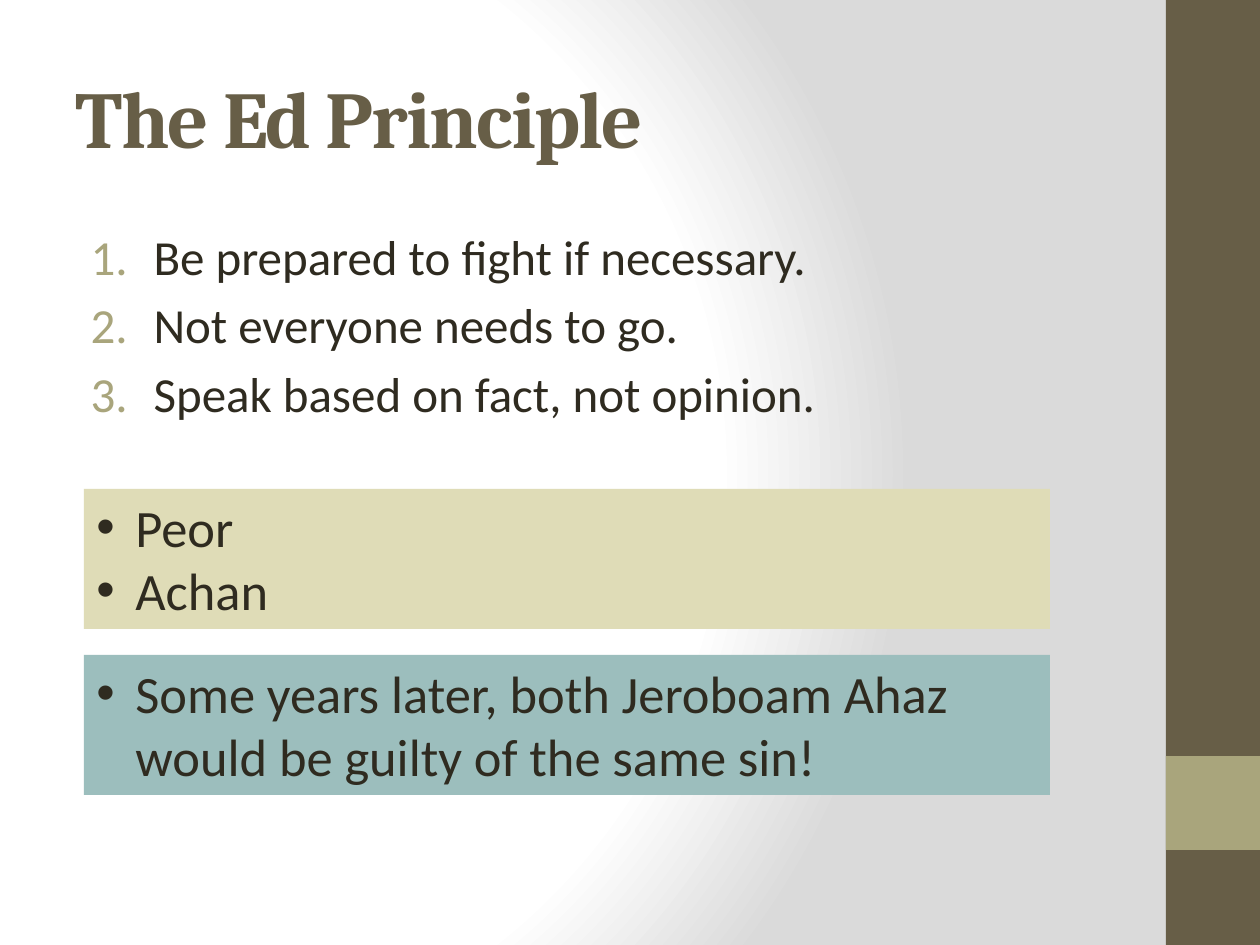
from lxml import etree
from pptx import Presentation
from pptx.dml.color import RGBColor
from pptx.enum.shapes import MSO_SHAPE as Shape
from pptx.enum.text import MSO_ANCHOR as Anchor, MSO_AUTO_SIZE as AutoSize, PP_ALIGN as Align
from pptx.oxml import parse_xml
from pptx.oxml.ns import nsdecls, qn
from pptx.util import Emu, Pt

PX = 914400 / 126
COLORS = {
    "brown": "675E47",
    "olive": "A9A57C",
    "ink": "2F2B20",
    "sand": "DFDCB7",
    "teal": "9CBEBD",
    "white": "FFFFFF",
    "gray": "DADADA",
}
STOPS = [(0, "white"), (75, "white"), (100, "gray")]
POINTS = ["Be prepared to fight if necessary.", "Not everyone needs to go.",
          "Speak based on fact, not opinion."]
CALLOUTS = [
    (489, "sand", ["Peor", "Achan"]),
    (655, "teal", ["Some years later, both Jeroboam Ahaz would be guilty of the same sin!"]),
]


def px(value):
    return Emu(round(value * PX))


def rgb(name):
    return RGBColor.from_string(COLORS[name])


def place(shape, left, top, width, height):
    shape.left, shape.top = px(left), px(top)
    shape.width, shape.height = px(width), px(height)


def set_font(paragraph, name, size, color, bold=False):
    font = paragraph.font
    font.name, font.size, font.bold = name, Pt(size), bold
    font.color.rgb = rgb(color)


def set_background(slide):
    slide.background.fill.solid()
    properties = slide.element.find(".//" + qn("p:bgPr"))
    stops = "".join(
        f'<a:gs pos="{position * 1000}"><a:srgbClr val="{COLORS[color]}"/></a:gs>'
        for position, color in STOPS)
    gradient = parse_xml(
        f'<a:gradFill {nsdecls("a")} rotWithShape="1"><a:gsLst>{stops}</a:gsLst>'
        '<a:path path="circle"><a:fillToRect l="20000" t="50000" r="100000" b="50000"/>'
        '</a:path></a:gradFill>')
    properties.replace(properties.find(qn("a:solidFill")), gradient)


def add_band(slide, top, height, color):
    band = slide.shapes.add_shape(Shape.RECTANGLE, px(1166), px(top), px(94), px(height))
    band.shadow.inherit = False
    band.fill.solid()
    band.fill.fore_color.rgb = rgb(color)
    band.line.fill.background()


def set_bullet(paragraph, left, hanging, tag, attributes, color):
    properties = paragraph._p.get_or_add_pPr()
    properties.set("marL", str(px(left)))
    properties.set("indent", str(-px(hanging)))
    bullet_color = etree.SubElement(properties, qn("a:buClr"))
    etree.SubElement(bullet_color, qn("a:srgbClr"), val=COLORS[color])
    if tag == "a:buChar":
        etree.SubElement(properties, qn("a:buFont"), typeface="Arial")
    etree.SubElement(properties, qn(tag), attributes)


def fill_list(frame, items, size, bullet):
    for index, item in enumerate(items):
        paragraph = frame.add_paragraph() if index else frame.paragraphs[0]
        paragraph.text = item
        set_bullet(paragraph, *bullet)
        set_font(paragraph, "Calibri", size, "ink")


def fill_title(title, text):
    place(title, 63, 38, 1050, 157)
    frame = title.text_frame
    frame.text = text
    frame.auto_size = AutoSize.NONE
    frame.vertical_anchor = Anchor.MIDDLE
    paragraph = frame.paragraphs[0]
    paragraph.alignment = Align.LEFT
    set_font(paragraph, "Cambria", 46, "brown", bold=True)
    paragraph.runs[0].font._element.set("spc", "-100")


def fill_body(body, items):
    place(body, 63, 220, 1050, 220)
    body.text_frame.auto_size = AutoSize.NONE
    numbering = (78, 63, "a:buAutoNum", {"type": "arabicPeriod"}, "olive")
    fill_list(body.text_frame, items, 28, numbering)


def add_callout(slide, top, color, items):
    callout = slide.shapes.add_textbox(px(84), px(top), px(966), px(140))
    callout.fill.solid()
    callout.fill.fore_color.rgb = rgb(color)
    frame = callout.text_frame
    frame.word_wrap = True
    frame.auto_size = AutoSize.SHAPE_TO_FIT_TEXT
    fill_list(frame, items, 30, (39, 39, "a:buChar", {"char": "•"}, "ink"))


def main():
    presentation = Presentation()
    presentation.slide_width, presentation.slide_height = px(1260), px(945)
    slide = presentation.slides.add_slide(presentation.slide_layouts[1])
    set_background(slide)
    add_band(slide, 0, 945, "brown")
    add_band(slide, 756, 94, "olive")
    fill_title(slide.shapes.title, "The Ed Principle")
    fill_body(slide.placeholders[1], POINTS)
    for top, color, items in CALLOUTS:
        add_callout(slide, top, color, items)
    presentation.save("out.pptx")


if __name__ == "__main__":
    main()
